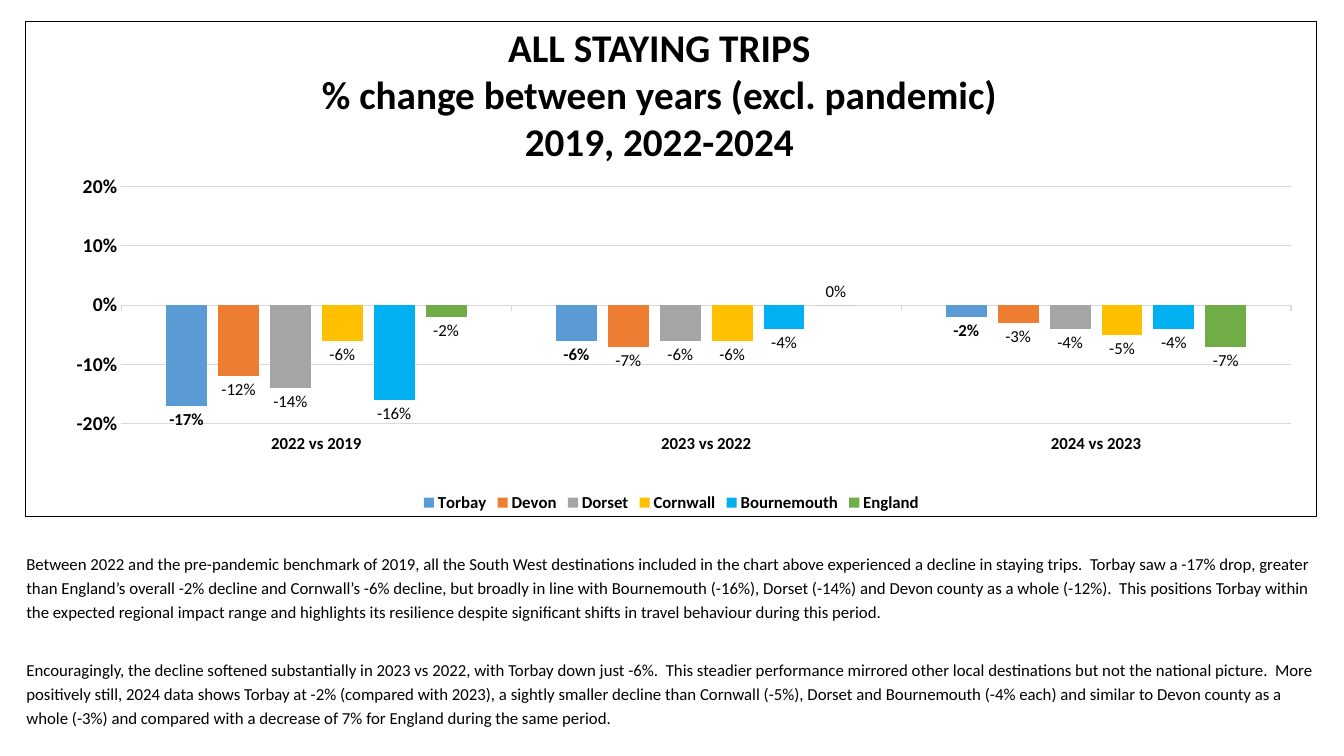
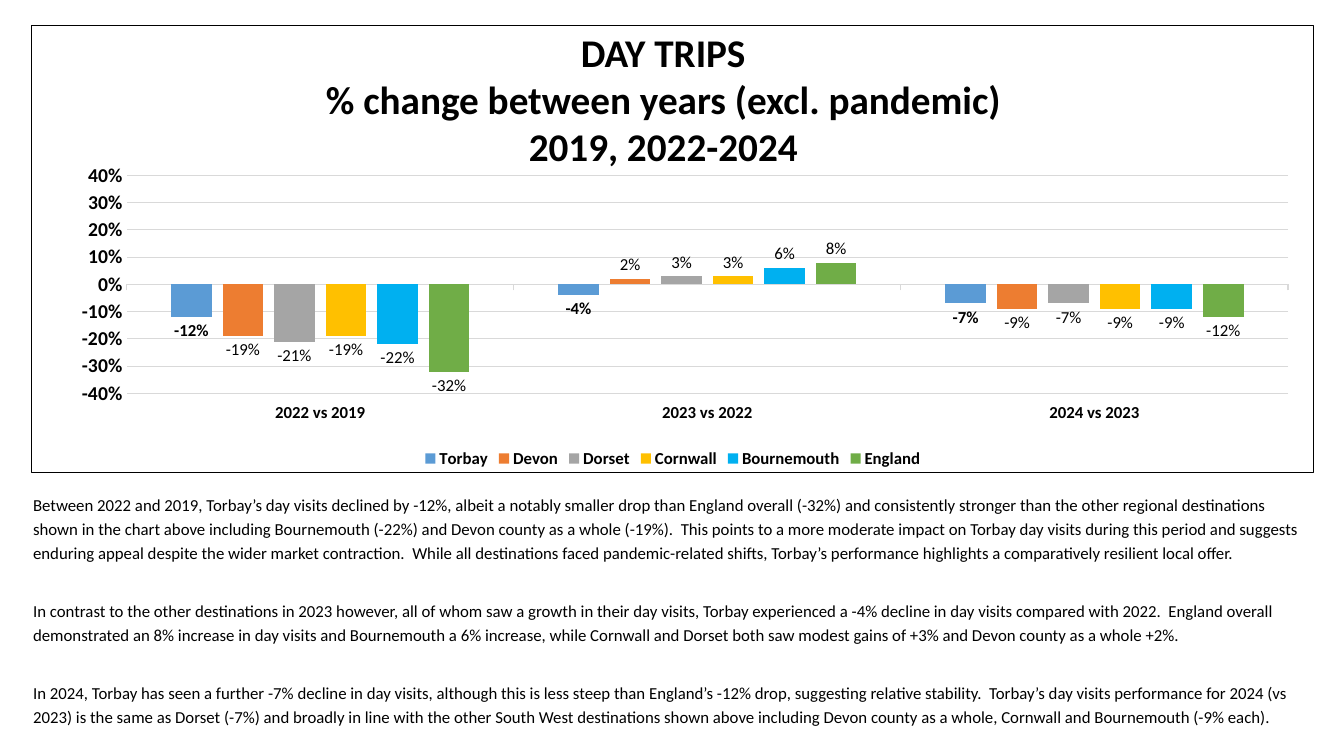
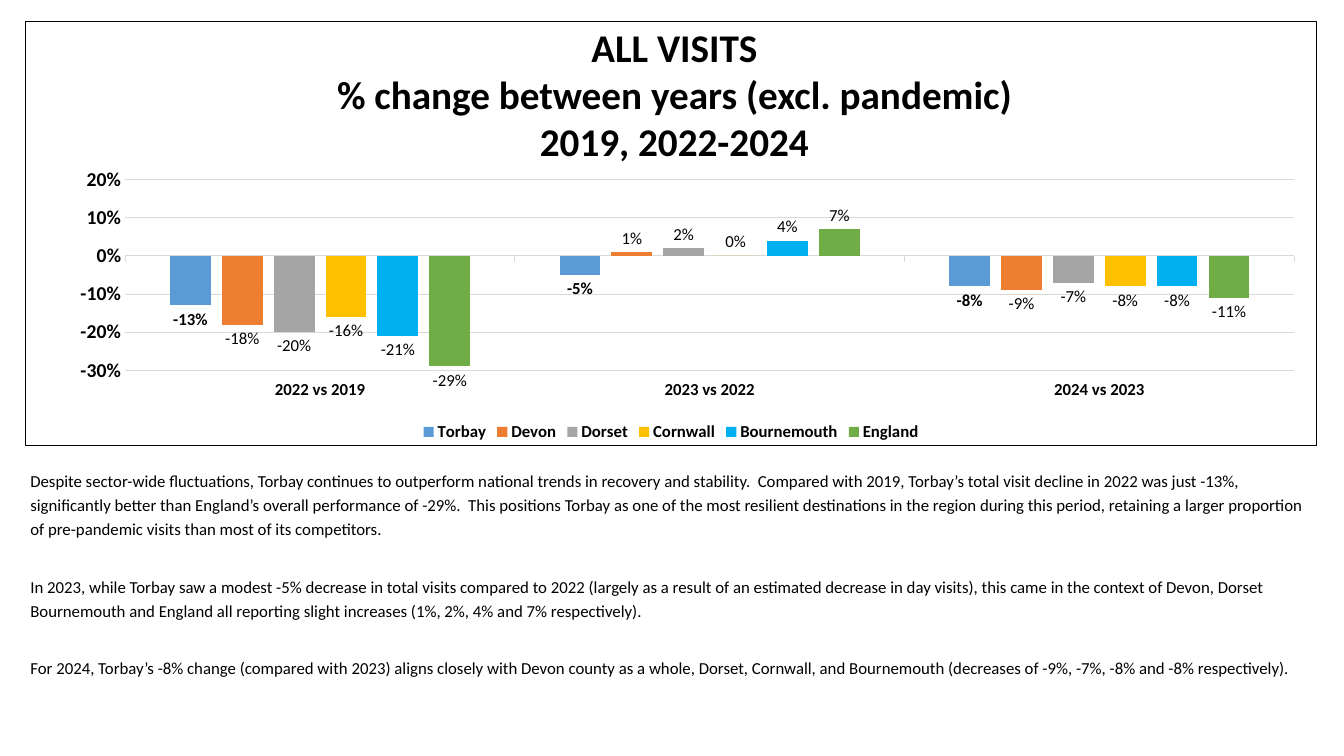
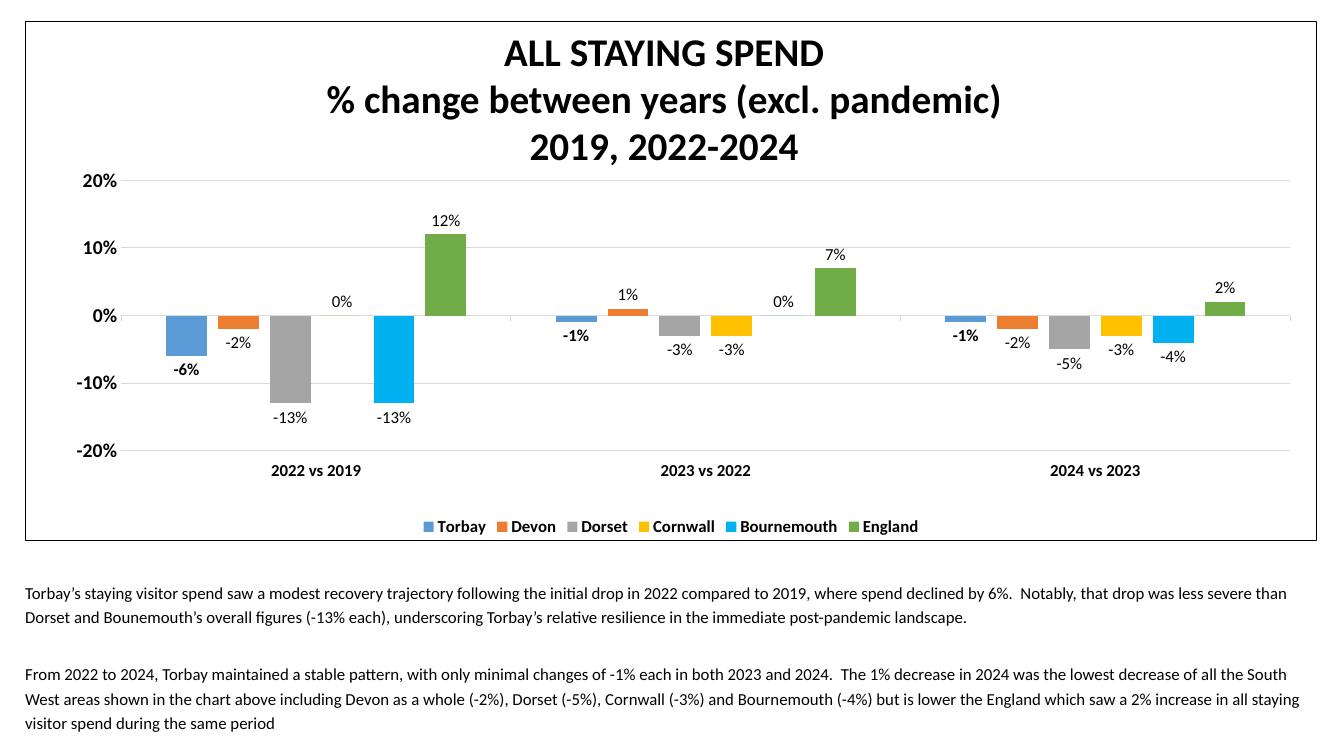
from lxml import etree
from pptx import Presentation
from pptx.chart.data import CategoryChartData
from pptx.dml.color import RGBColor
from pptx.enum.chart import (XL_CHART_TYPE, XL_LABEL_POSITION,
                             XL_LEGEND_POSITION, XL_TICK_LABEL_POSITION,
                             XL_TICK_MARK)
from pptx.enum.text import MSO_ANCHOR, MSO_AUTO_SIZE, PP_ALIGN
from pptx.oxml import parse_xml
from pptx.oxml.ns import nsdecls, qn
from pptx.util import Cm, Pt

CLUSTERED = XL_CHART_TYPE.COLUMN_CLUSTERED
OUTSIDE_END = XL_LABEL_POSITION.OUTSIDE_END
BOTTOM = XL_LEGEND_POSITION.BOTTOM
LOW = XL_TICK_LABEL_POSITION.LOW
TICK_NONE, TICK_OUT = XL_TICK_MARK.NONE, XL_TICK_MARK.OUTSIDE
TOP = MSO_ANCHOR.TOP
LEFT, CENTER = PP_ALIGN.LEFT, PP_ALIGN.CENTER

# Shared style
FONT = "Calibri"
COLORS = {
    "text": "000000", "grid": "D9D9D9",
    "Torbay": "5B9BD5", "Devon": "ED7D31", "Dorset": "A5A5A5",
    "Cornwall": "FFC000", "Bournemouth": "00B0F0", "England": "70AD47",
}
AREAS = ["Torbay", "Devon", "Dorset", "Cornwall", "Bournemouth", "England"]
HIGHLIGHT = "Torbay"
PERIODS = ["2022 vs 2019", "2023 vs 2022", "2024 vs 2023"]
SUBTITLE = ["% change between years (excl. pandemic)", "2019, 2022-2024"]
TITLE_W, TITLE_H = 19.91, 3.84
FIRST_GAP, NEXT_GAP = 3.1, 23.8

# Content: boxes in cm, plot area as fractions of the chart,
# values in percent with one row per area
SLIDES = [
    {
        "title": "ALL STAYING TRIPS", "title_at": (6.66, 0.46),
        "chart_box": (0.64, 0.53, 32.56, 12.5),
        "plot": (0.07, 0.33, 0.91, 0.48), "plot_fine": (0.074, 0.334, 0.906, 0.478),
        "range": (-20, 20),
        "values": [(-17, -6, -2), (-12, -7, -3), (-14, -6, -4),
                   (-6, -6, -5), (-16, -4, -4), (-2, 0, -7)],
        "body_box": (0.41, 13.72, 33.27, 4.75),
        "body": [
            "Between 2022 and the pre-pandemic benchmark of 2019, all the South West destinations included in the chart above experienced a decline in staying trips.  Torbay saw a -17% drop, greater than England’s overall -2% decline and Cornwall’s -6% decline, but broadly in line with Bournemouth (-16%), Dorset (-14%) and Devon county as a whole (-12%).  This positions Torbay within the expected regional impact range and highlights its resilience despite significant shifts in travel behaviour during this period.",
            "Encouragingly, the decline softened substantially in 2023 vs 2022, with Torbay down just -6%.  This steadier performance mirrored other local destinations but not the national picture.  More positively still, 2024 data shows Torbay at -2% (compared with 2023), a sightly smaller decline than Cornwall (-5%), Dorset and Bournemouth (-4% each) and similar to Devon county as a whole (-3%) and compared with a decrease of 7% for England during the same period.",
        ],
    },
    {
        "title": "DAY TRIPS", "title_at": (6.76, 0.58),
        "chart_box": (0.79, 0.64, 32.33, 11.28),
        "plot_fine": (0.074, 0.335, 0.906, 0.488),
        "range": (-40, 40),
        "values": [(-12, -4, -7), (-19, 2, -9), (-21, 3, -7),
                   (-19, 3, -9), (-22, 6, -9), (-32, 8, -12)],
        "body_box": (0.58, 12.24, 32.79, 6.17),
        "body": [
            "Between 2022 and 2019, Torbay’s day visits declined by -12%, albeit a notably smaller drop than England overall (-32%) and consistently stronger than the other regional destinations shown in the chart above including Bournemouth (-22%) and Devon county as a whole (-19%).  This points to a more moderate impact on Torbay day visits during this period and suggests enduring appeal despite the wider market contraction.  While all destinations faced pandemic-related shifts, Torbay’s performance highlights a comparatively resilient local offer.",
            "In contrast to the other destinations in 2023 however, all of whom saw a growth in their day visits, Torbay experienced a -4% decline in day visits compared with 2022.  England overall demonstrated an 8% increase in day visits and Bournemouth a 6% increase, while Cornwall and Dorset both saw modest gains of +3% and Devon county as a whole +2%.",
            "In 2024, Torbay has seen a further -7% decline in day visits, although this is less steep than England’s -12% drop, suggesting relative stability.  Torbay’s day visits performance for 2024 (vs 2023) is the same as Dorset (-7%) and broadly in line with the other South West destinations shown above including Devon county as a whole, Cornwall and Bournemouth (-9% each).",
        ],
    },
    {
        "title": "ALL VISITS", "title_at": (7.04, 0.46),
        "chart_box": (0.64, 0.53, 32.54, 10.72),
        "plot_fine": (0.077, 0.373, 0.906, 0.449),
        "range": (-30, 20),
        "values": [(-13, -5, -8), (-18, 1, -9), (-20, 2, -7),
                   (-16, 0, -8), (-21, 4, -8), (-29, 7, -11)],
        "body_box": (0.51, 11.63, 32.84, 5.56),
        "body": [
            "Despite sector-wide fluctuations, Torbay continues to outperform national trends in recovery and stability.  Compared with 2019, Torbay’s total visit decline in 2022 was just -13%, significantly better than England’s overall performance of -29%.  This positions Torbay as one of the most resilient destinations in the region during this period, retaining a larger proportion of pre-pandemic visits than most of its competitors.",
            "In 2023, while Torbay saw a modest -5% decrease in total visits compared to 2022 (largely as a result of an estimated decrease in day visits), this came in the context of Devon, Dorset Bournemouth and England all reporting slight increases (1%, 2%, 4% and 7% respectively).",
            "For 2024, Torbay’s -8% change (compared with 2023) aligns closely with Devon county as a whole, Dorset, Cornwall, and Bournemouth (decreases of -9%, -7%, -8% and -8% respectively).",
        ],
    },
    {
        "title": "ALL STAYING SPEND", "title_at": (6.78, 0.56),
        "chart_box": (0.64, 0.53, 32.54, 13.11),
        "plot_fine": (0.074, 0.306, 0.906, 0.521),
        "range": (-20, 20),
        "values": [(-6, -1, -1), (-2, 1, -2), (-13, -3, -5),
                   (0, -3, -3), (-13, 0, -4), (12, 7, 2)],
        "body_box": (0.38, 14.45, 32.84, 4.11),
        "body": [
            "Torbay’s staying visitor spend saw a modest recovery trajectory following the initial drop in 2022 compared to 2019, where spend declined by 6%.  Notably, that drop was less severe than Dorset and Bounemouth’s overall figures (-13% each), underscoring Torbay’s relative resilience in the immediate post-pandemic landscape.",
            "From 2022 to 2024, Torbay maintained a stable pattern, with only minimal changes of -1% each in both 2023 and 2024.  The 1% decrease in 2024 was the lowest decrease of all the South West areas shown in the chart above including Devon as a whole (-2%), Dorset (-5%), Cornwall (-3%) and Bournemouth (-4%) but is lower the England which saw a 2% increase in all staying visitor spend during the same period",
        ],
    },
]


def rgb(name):
    return RGBColor.from_string(COLORS[name])


def set_font(font, size, bold=False):
    font.name, font.size, font.bold = FONT, Pt(size), bold
    font.color.rgb = rgb("text")


def set_line(line, color):
    line.color.rgb = rgb(color)
    line.width = Pt(0.75)


def write(sp, box, paragraphs, size=12, bold=False, align=LEFT, spacing=1.0,
          first_gap=0, next_gap=0):
    """Place a placeholder and fill it with unbulleted paragraphs."""
    sp.left, sp.top, sp.width, sp.height = (Cm(v) for v in box)
    tf = sp.text_frame
    tf.word_wrap, tf.auto_size = True, MSO_AUTO_SIZE.NONE
    tf.vertical_anchor = TOP
    for i, text in enumerate(paragraphs):
        p = tf.paragraphs[0] if i == 0 else tf.add_paragraph()
        p.alignment, p.line_spacing = align, spacing
        p.space_before, p.space_after = Pt(next_gap if i else first_gap), Pt(0)
        pPr = p._p.get_or_add_pPr()
        pPr.set("marL", "0")
        pPr.set("indent", "0")
        etree.SubElement(pPr, qn("a:buNone"))
        r = p.add_run()
        r.text = text
        set_font(r.font, size, bold)


def frame_chart(chart, plot):
    """Give the chart a thin border, no fill and a fixed inner plot area."""
    chart_el = chart.element.find(qn("c:chart"))
    chart_el.addnext(parse_xml(
        f'<c:spPr {nsdecls("c", "a")}><a:noFill/><a:ln w="{Pt(0.75)}"><a:solidFill>'
        f'<a:srgbClr val="{COLORS["text"]}"/></a:solidFill></a:ln></c:spPr>'))
    area = chart_el.find(qn("c:plotArea"))
    for old in area.findall(qn("c:layout")):
        area.remove(old)
    sizes = "".join(f'<c:{tag} val="{v}"/>' for tag, v in zip("xywh", plot))
    area.insert(0, parse_xml(
        f'<c:layout {nsdecls("c")}><c:manualLayout><c:layoutTarget val="inner"/>'
        f'<c:xMode val="edge"/><c:yMode val="edge"/>{sizes}'
        '</c:manualLayout></c:layout>'))


def add_change_chart(s, item):
    data = CategoryChartData(number_format="0%")
    data.categories = PERIODS
    for area, values in zip(AREAS, item["values"]):
        data.add_series(area, [v / 100 for v in values])
    box = (Cm(v) for v in item["chart_box"])
    chart = s.shapes.add_chart(CLUSTERED, *box, data).chart
    set_font(chart.font, 10)
    chart.has_title = False
    chart.has_legend = True
    chart.legend.position, chart.legend.include_in_layout = BOTTOM, False
    set_font(chart.legend.font, 12, bold=True)
    frame_chart(chart, item["plot_fine"])

    # Axes
    cat, val = chart.category_axis, chart.value_axis
    cat.tick_label_position = LOW
    cat.major_tick_mark, cat.minor_tick_mark = TICK_OUT, TICK_NONE
    set_font(cat.tick_labels.font, 12, bold=True)
    set_line(cat.format.line, "grid")
    val.minimum_scale, val.maximum_scale = (v / 100 for v in item["range"])
    val.major_unit = 0.1
    val.major_tick_mark = val.minor_tick_mark = TICK_NONE
    val.tick_labels.number_format = "0%"
    val.tick_labels.number_format_is_linked = False
    set_font(val.tick_labels.font, 14, bold=True)
    val.format.line.fill.background()
    val.has_major_gridlines = True
    set_line(val.major_gridlines.format.line, "grid")

    # Columns and their labels
    plot = chart.plots[0]
    plot.gap_width, plot.overlap, plot.vary_by_categories = 219, -27, False
    for series in plot.series:
        series.invert_if_negative = False
        series.format.fill.solid()
        series.format.fill.fore_color.rgb = rgb(series.name)
        labels = series.data_labels
        labels.show_value, labels.position = True, OUTSIDE_END
        labels.number_format, labels.number_format_is_linked = "0%", False
        set_font(labels.font, 12, bold=series.name == HIGHLIGHT)


def main():
    prs = Presentation()
    prs.slide_width, prs.slide_height = Cm(33.87), Cm(19.05)
    layout = prs.slide_layouts[1]
    for item in SLIDES:
        s = prs.slides.add_slide(layout)
        write(s.shapes.title, (*item["title_at"], TITLE_W, TITLE_H),
              [item["title"], *SUBTITLE], size=28, bold=True, align=CENTER)
        write(s.placeholders[1], item["body_box"], item["body"], spacing=1.2,
              first_gap=FIRST_GAP, next_gap=NEXT_GAP)
        add_change_chart(s, item)
    prs.save("out.pptx")


if __name__ == "__main__":
    main()
